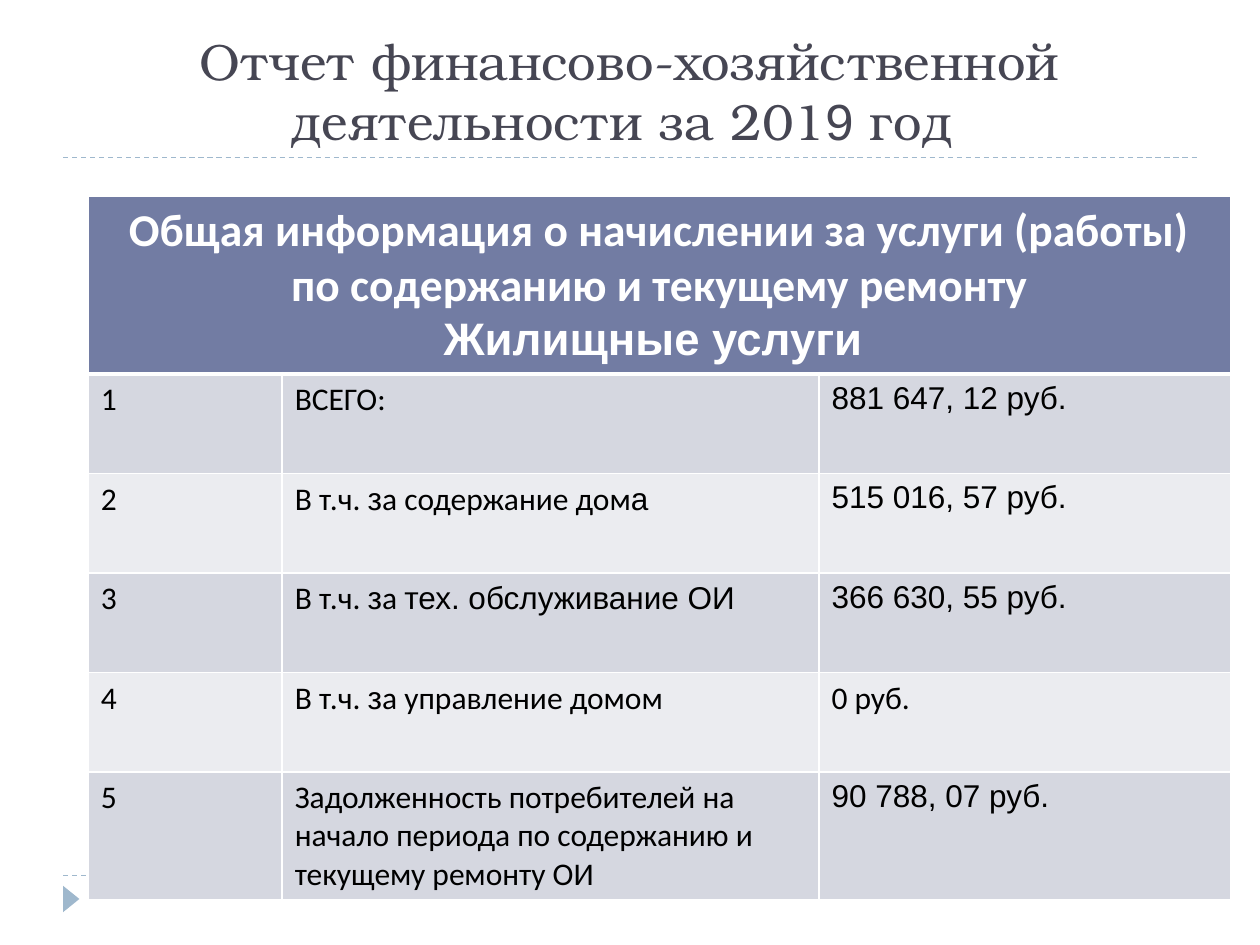
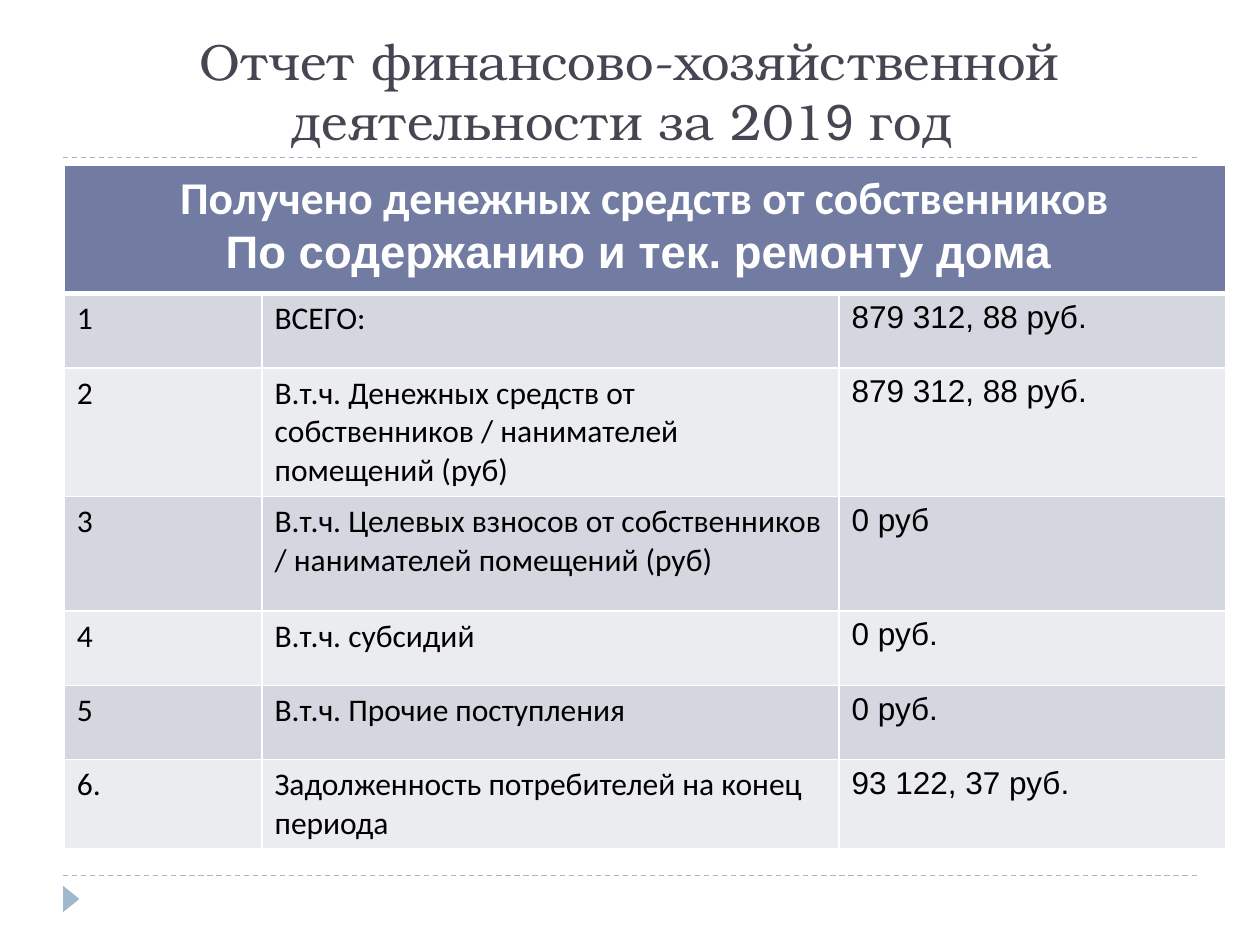
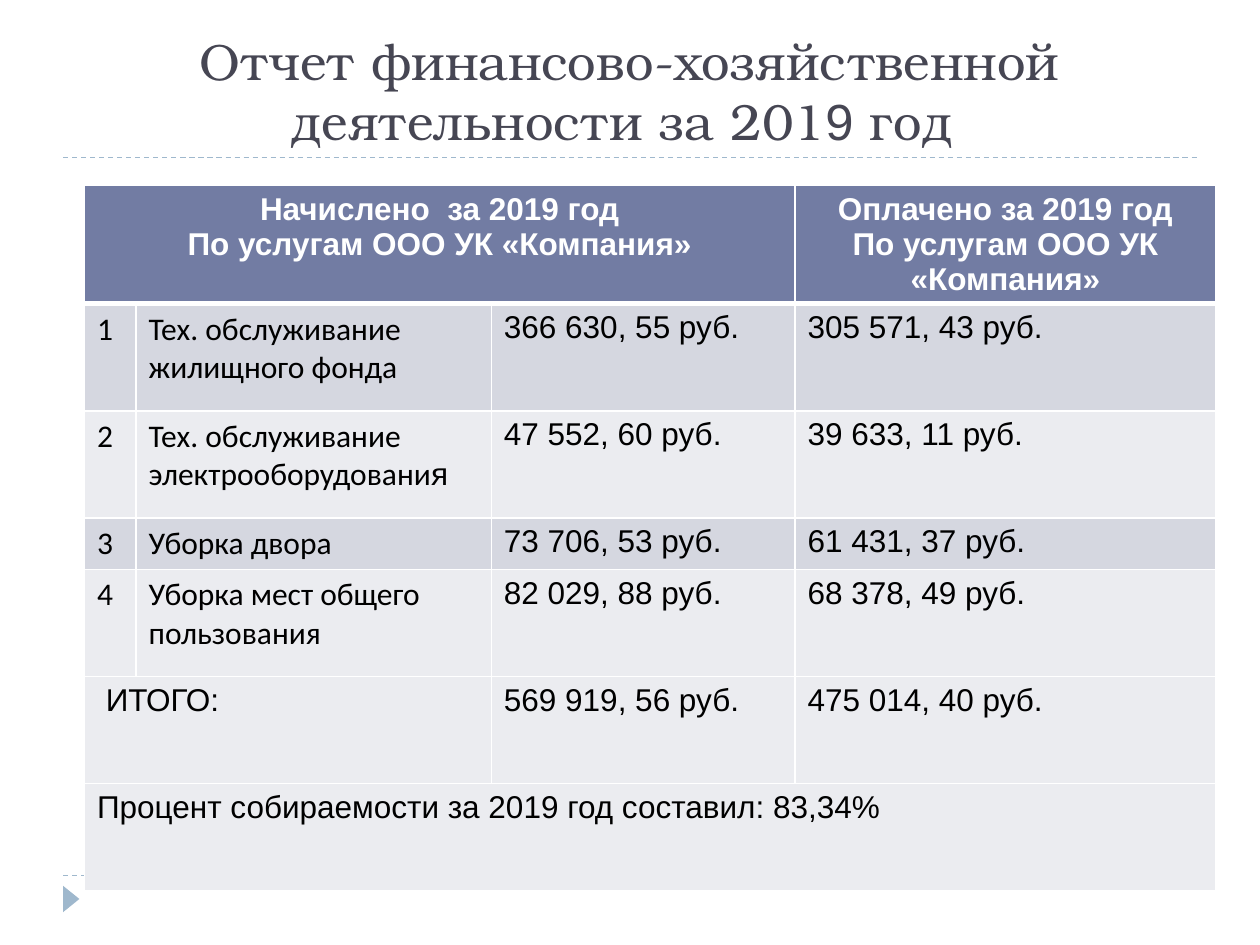
from lxml.etree import SubElement
from pptx import Presentation
from pptx.dml.color import RGBColor
from pptx.enum.dml import MSO_LINE
from pptx.enum.shapes import MSO_CONNECTOR, MSO_SHAPE
from pptx.enum.text import MSO_ANCHOR, MSO_AUTO_SIZE, PP_ALIGN
from pptx.oxml.ns import qn
from pptx.util import Inches, Pt

WHITE = RGBColor(0xFF, 0xFF, 0xFF)
BLACK = RGBColor(0x00, 0x00, 0x00)
TITLE_COLOR = RGBColor(0x46, 0x46, 0x53)
ACCENT = RGBColor(0x9F, 0xB8, 0xCD)
HEADER_FILL = RGBColor(0x72, 0x7C, 0xA3)
DARK_BAND = RGBColor(0xD5, 0xD7, 0xE0)
LIGHT_BAND = RGBColor(0xEB, 0xEC, 0xF0)

SERIF = "TeX Gyre Bonum"
ARIAL = "Arial"
CALIBRI = "Calibri"

TITLE = [
    ("Отчет финансово-хозяйственной деятельности за 201", SERIF),
    ("9", ARIAL),
    (" год ", SERIF),
]


def write_text(paragraph, text, *, font, size, color, bold=False, align=None):
    paragraph.alignment = align
    for words, name in [(text, font)] if isinstance(text, str) else text:
        run = paragraph.add_run()
        run.text = words
        run.font.name = name
        run.font.size = Pt(size)
        run.font.bold = bold
        run.font.color.rgb = color


def set_borders(cell, **widths):
    properties = cell._tc.get_or_add_tcPr()
    for side in ("L", "R", "T", "B"):
        line = SubElement(properties, qn(f"a:ln{side}"), w=str(Pt(widths.get(side, 1))))
        fill = SubElement(line, qn("a:solidFill"))
        SubElement(fill, qn("a:srgbClr"), val=str(WHITE))


class ReportDeck:
    def __init__(self):
        self.presentation = Presentation()
        self.presentation.slide_width = Inches(10)
        self.presentation.slide_height = Inches(7.5)
        self.slide = None

    def add_slide(self):
        layout = self.presentation.slide_layouts.get_by_name("Title Only")
        self.slide = self.presentation.slides.add_slide(layout)
        for top in (6.95, 1.25):
            self.add_rule(top)
        self.add_marker()
        self.add_title()

    def add_rule(self, top):
        rule = self.slide.shapes.add_connector(
            MSO_CONNECTOR.STRAIGHT, Inches(0.5), Inches(top), Inches(9.5), Inches(top)
        )
        rule.line.color.rgb = ACCENT
        rule.line.width = Pt(0.75)
        rule.line.dash_style = MSO_LINE.DASH
        SubElement(rule._element.spPr, qn("a:effectLst"))

    def add_marker(self):
        marker = self.slide.shapes.add_shape(
            MSO_SHAPE.ISOSCELES_TRIANGLE,
            Inches(0.46), Inches(7.07), Inches(0.21), Inches(0.13),
        )
        marker.rotation = 90
        marker.shadow.inherit = False
        marker.fill.solid()
        marker.fill.fore_color.rgb = ACCENT
        marker.line.fill.background()

    def add_title(self):
        title = self.slide.shapes.title
        title.left, title.top = Inches(0.5), Inches(0.25)
        title.width, title.height = Inches(9), Inches(1)
        frame = title.text_frame
        frame.word_wrap = True
        frame.auto_size = MSO_AUTO_SIZE.NONE
        frame.vertical_anchor = MSO_ANCHOR.BOTTOM
        write_text(frame.paragraphs[0], TITLE, font=SERIF, size=29,
                   color=TITLE_COLOR, align=PP_ALIGN.CENTER)

    def add_table(self, left, top, widths, heights, header, rows, fonts, header_size):
        table = self.slide.shapes.add_table(
            len(heights), len(widths), Inches(left), Inches(top),
            Inches(sum(widths)), Inches(sum(heights)),
        ).table
        for column, width in zip(table.columns, widths):
            column.width = Inches(width)
        for row, height in zip(table.rows, heights):
            row.height = Inches(height)
        for index, texts in enumerate([header] + rows):
            self.fill_row(table, index, texts, fonts, header_size)

    def fill_row(self, table, index, texts, fonts, header_size):
        if index == 0:
            color = HEADER_FILL
        else:
            color = LIGHT_BAND if index % 2 == 0 or None in texts else DARK_BAND
        start = 0
        for column, text in enumerate(texts):
            cell = table.cell(index, column)
            set_borders(cell, T=3 if index == 1 else 1, B=3 if index == 0 else 1)
            cell.fill.solid()
            cell.fill.fore_color.rgb = color
            if text is not None:
                start = column
                if index == 0:
                    self.write_header(cell, text, header_size)
                else:
                    write_text(cell.text_frame.paragraphs[0], text,
                               font=fonts[column], size=18, color=BLACK)
            elif column + 1 == len(texts) or texts[column + 1] is not None:
                table.cell(index, start).merge(cell)

    def write_header(self, cell, lines, size):
        frame = cell.text_frame
        for number, (text, font) in enumerate(lines):
            paragraph = frame.add_paragraph() if number else frame.paragraphs[0]
            write_text(paragraph, text, font=font, size=size, color=WHITE,
                       bold=True, align=PP_ALIGN.CENTER)


def add_charges(deck):
    deck.add_slide()
    including = [("В т.ч. ", CALIBRI), ("з", ARIAL)]
    deck.add_table(
        0.7, 1.56, [1.54, 4.26, 3.27], [1.41] + [0.79] * 4 + [1.01],
        [[("Общая информация о начислении за услуги (работы) "
           "по содержанию и текущему ремонту", CALIBRI),
          ("Жилищные услуги ", ARIAL)], None, None],
        [
            ["1", "ВСЕГО:", "881 647, 12 руб."],
            ["2", including + [("а содержание дом", CALIBRI), ("а", ARIAL)],
             "515 016, 57 руб."],
            ["3", including + [("а ", CALIBRI), ("тех. обслуживание ОИ", ARIAL)],
             "366 630, 55 руб."],
            ["4", including + [("а управление домом", CALIBRI)],
             [("0 руб.", CALIBRI)]],
            ["5", "Задолженность потребителей на начало периода "
                  "по содержанию и текущему ремонту ОИ", "90 788, 07 руб."],
        ],
        [CALIBRI, CALIBRI, ARIAL], 26,
    )


def add_receipts(deck):
    deck.add_slide()
    deck.add_table(
        0.51, 1.31, [1.57, 4.58, 3.07], [1.02, 0.59, 1.02, 0.91, 0.59, 0.59, 0.7],
        [[("Получено денежных средств от собственников", CALIBRI),
          ("По содержанию и тек. ремонту дома ", ARIAL)], None, None],
        [
            ["1", "ВСЕГО:", "879 312, 88 руб."],
            ["2", "В.т.ч. Денежных средств от собственников / "
                  "нанимателей помещений (руб)", "879 312, 88 руб."],
            ["3", "В.т.ч. Целевых взносов от собственников / "
                  "нанимателей помещений (руб)", "0 руб"],
            ["4", "В.т.ч. субсидий", "0 руб."],
            ["5", "В.т.ч. Прочие поступления", "0 руб."],
            ["6.", "Задолженность потребителей на конец периода",
             "93 122, 37 руб."],
        ],
        [CALIBRI, CALIBRI, ARIAL], 26,
    )


def add_services(deck):
    deck.add_slide()
    company = ("По услугам ООО УК «Компания»", ARIAL)
    deck.add_table(
        0.67, 1.47, [0.41, 2.82, 2.41, 3.34],
        [0.93, 0.85, 0.85, 0.41, 0.85, 0.85, 0.85],
        [[("Начислено  за 2019 год", ARIAL), company], None, None,
         [("Оплачено за 2019 год", ARIAL), company]],
        [
            ["1", "Тех. обслуживание жилищного фонда",
             "366 630, 55 руб.", "305 571, 43 руб."],
            ["2", [("Тех. обслуживание электрооборудовани", CALIBRI), ("я", ARIAL)],
             "47 552, 60 руб.", "39 633, 11 руб."],
            ["3", "Уборка двора", "73 706, 53 руб.", "61 431, 37 руб."],
            ["4", "Уборка мест общего пользования",
             "82 029, 88 руб.", "68 378, 49 руб."],
            [[(" ИТОГО:", ARIAL)], None, "569 919, 56 руб.", "475 014, 40 руб."],
            [[("Процент собираемости за 2019 год составил: 83,34%", ARIAL)],
             None, None, None],
        ],
        [CALIBRI, CALIBRI, ARIAL, ARIAL], 18,
    )


def main():
    deck = ReportDeck()
    add_charges(deck)
    add_receipts(deck)
    add_services(deck)
    deck.presentation.save("out.pptx")


if __name__ == "__main__":
    main()
